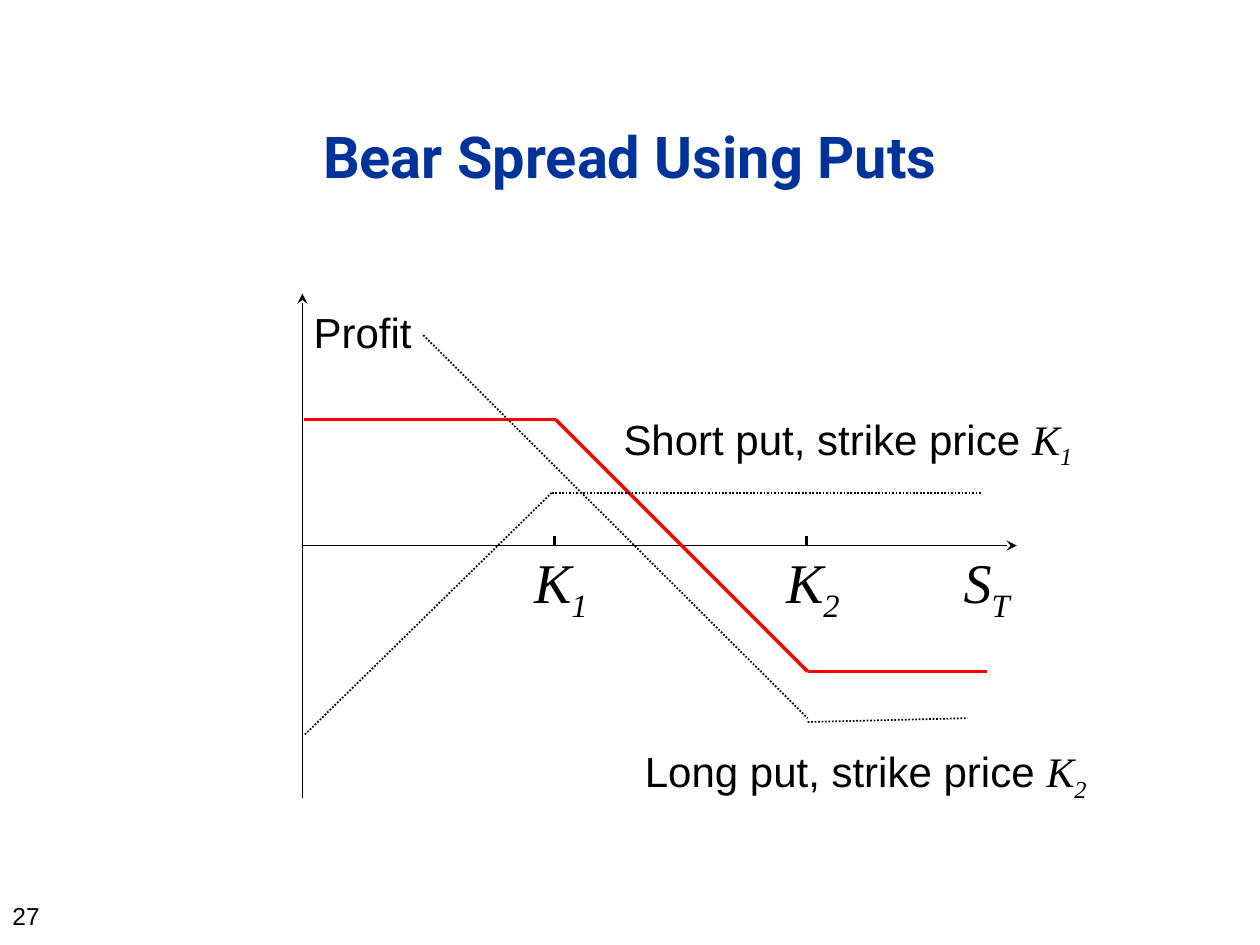
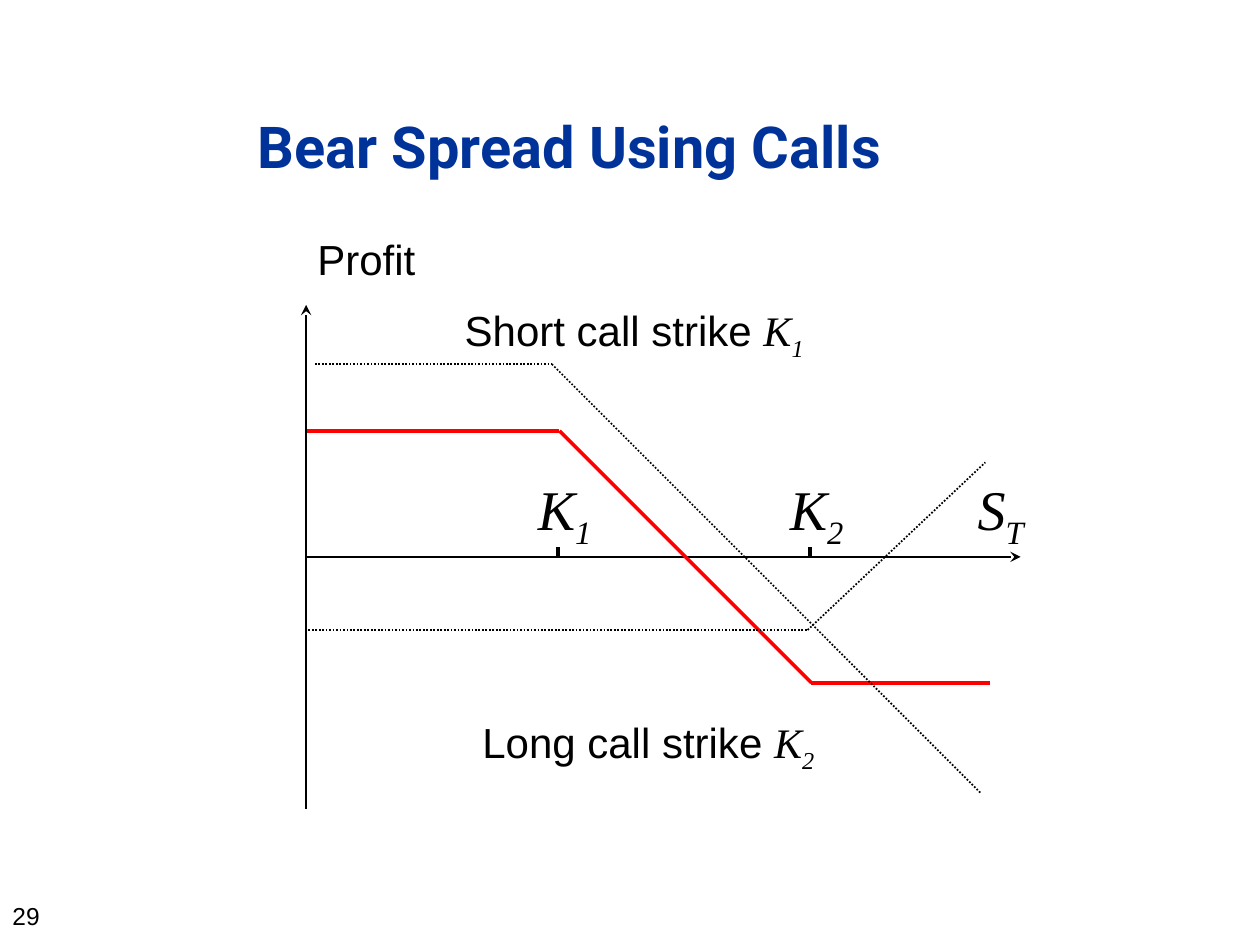
import pptx
import pptx.util
import pptx.dml.color
import pptx.enum.dml
import pptx.enum.shapes
import pptx.enum.text
import pptx.oxml
import pptx.oxml.ns
import lxml.etree

Inches = pptx.util.Inches
Pt = pptx.util.Pt
RGBColor = pptx.dml.color.RGBColor

TITLE_BLUE = RGBColor(0x00, 0x33, 0x99)
BLACK = RGBColor(0x00, 0x00, 0x00)
SPREAD_RED = RGBColor(0xFF, 0x00, 0x00)

TITLE_FONT = "Roboto"
TEXT_FONT = "Arial"
SYMBOL_FONT = "Times New Roman"

# Distances from the origin of the payoff axes, shared by both diagrams
STRIKES = {"1": 2, "2": 4}
SPREAD_PAYOFF = [(0.01, -1), (2.01, -1), (4.01, 1), (5.43, 1)]
AXIS_REACH = 2
AXIS_LENGTH = 5.67
TICK_HEIGHT = 0.08


class PayoffDeck:
    """Holds the deck style and the slide being drawn."""

    def __init__(self):
        self.deck = pptx.Presentation()
        self.deck.slide_width = Inches(10)
        self.deck.slide_height = Inches(7.5)
        self.slide = None

    def new_slide(self, title, title_at, number):
        self.slide = self.deck.slides.add_slide(self.deck.slide_layouts[6])
        self.title(title, *title_at)
        self.text(0, 7.1, 2.25, 0.4, number, size=14)

    def box(self, left, top, width, height, wrap=False):
        frame = self.slide.shapes.add_textbox(
            Inches(left), Inches(top), Inches(width), Inches(height)).text_frame
        frame.word_wrap = wrap
        return frame

    def title(self, text, left, top):
        frame = self.box(left, top, 8.5, 1.25, wrap=True)
        frame.vertical_anchor = pptx.enum.text.MSO_ANCHOR.MIDDLE
        frame.margin_bottom = Inches(0.52)
        heading = frame.paragraphs[0]
        heading.text = text
        heading.alignment = pptx.enum.text.PP_ALIGN.CENTER
        heading.line_spacing = 1.05
        heading.font.name = TITLE_FONT
        heading.font.size = Pt(33)
        heading.font.bold = True
        heading.font.color.rgb = TITLE_BLUE

    def text(self, left, top, width, height, words, symbol="", index="", size=24):
        """Plain words, then an optional italic symbol with a subscript."""
        frame = self.box(left, top, width, height)
        paragraph = frame.paragraphs[0]
        paragraph.font.size = Pt(size)
        paragraph.font.color.rgb = BLACK
        if not (words and symbol):
            paragraph.font.name = SYMBOL_FONT if symbol else TEXT_FONT
            paragraph.font.italic = bool(symbol)
        for part in filter(None, (words, symbol, index)):
            run = paragraph.add_run()
            run.text = part
            if words and symbol:
                run.font.name = TEXT_FONT if part == words else SYMBOL_FONT
                run.font.italic = part != words
            if part == index:
                run._r.get_or_add_rPr().set("baseline", "-25000")

    def line(self, start, end, color=BLACK, width=1, dotted=False, arrow=False):
        connector = self.slide.shapes.add_connector(
            pptx.enum.shapes.MSO_CONNECTOR.STRAIGHT,
            *(Inches(length) for length in (*start, *end)))
        connector.line.color.rgb = color
        connector.line.width = Pt(width)
        if dotted:
            connector.line.dash_style = pptx.enum.dml.MSO_LINE.ROUND_DOT
        qn = pptx.oxml.ns.qn
        if arrow:
            tip = lxml.etree.SubElement(connector.line._get_or_add_ln(), qn("a:tailEnd"))
            tip.set("type", "stealth")
        lxml.etree.SubElement(connector._element.spPr, qn("a:effectLst"))

    def polyline(self, points, **style):
        for start, end in zip(points, points[1:]):
            self.line(start, end, **style)

    def diagram(self, origin, symbol_top, price_left, profit_top, legs):
        """Axes, strike marks, option legs and the resulting spread."""
        x, y = origin
        # Axes
        self.line((x, y + AXIS_REACH), (x, y - AXIS_REACH), arrow=True)
        self.line(origin, (x + AXIS_LENGTH, y), arrow=True)
        self.text(x - 0.01, profit_top, 0.99, 0.51, "Profit")
        self.text(price_left, symbol_top, 0.59, 0.63, "", "S", "T", size=32)
        # Strike prices
        for index, distance in STRIKES.items():
            strike = x + distance
            self.line((strike, y), (strike, y - TICK_HEIGHT), width=2)
            self.text(strike - 0.26, symbol_top, 0.64, 0.63, "", "K", index, size=32)
        # Total payoff and the two legs
        self.polyline([(x + dx, y + dy) for dx, dy in SPREAD_PAYOFF],
                      color=SPREAD_RED, width=2)
        for leg in legs:
            self.polyline(leg, dotted=True)

    def leg_label(self, left, top, width, words, index):
        self.text(left, top, width, 0.91, words, "K", index)


def main():
    payoffs = PayoffDeck()

    # Puts
    payoffs.new_slide("Bear Spread Using Puts", (0.75, 0.83), "27")
    payoffs.diagram(
        origin=(2.4, 4.33), symbol_top=4.3, price_left=7.55, profit_top=2.38,
        legs=[[(3.36, 2.66), (6.41, 5.7)],
              [(6.41, 5.73), (7.68, 5.7)],
              [(2.42, 5.83), (4.38, 3.91), (7.79, 3.91)]])
    payoffs.leg_label(4.85, 3.23, 3.81, "Short put, strike price ", "1")
    payoffs.leg_label(5.02, 5.87, 3.76, "Long put, strike price ", "2")

    # Calls
    payoffs.new_slide("Bear Spread Using Calls", (0.27, 0.75), "29")
    payoffs.diagram(
        origin=(2.43, 4.42), symbol_top=3.72, price_left=7.66, profit_top=1.8,
        legs=[[(2.5, 2.89), (4.38, 2.89), (7.79, 6.3)],
              [(2.42, 5), (6.41, 5), (7.82, 3.67)]])
    payoffs.leg_label(3.59, 2.37, 2.9, "Short call strike ", "1")
    payoffs.leg_label(3.73, 5.64, 2.85, "Long call strike ", "2")

    payoffs.deck.save("out.pptx")


if __name__ == "__main__":
    main()
